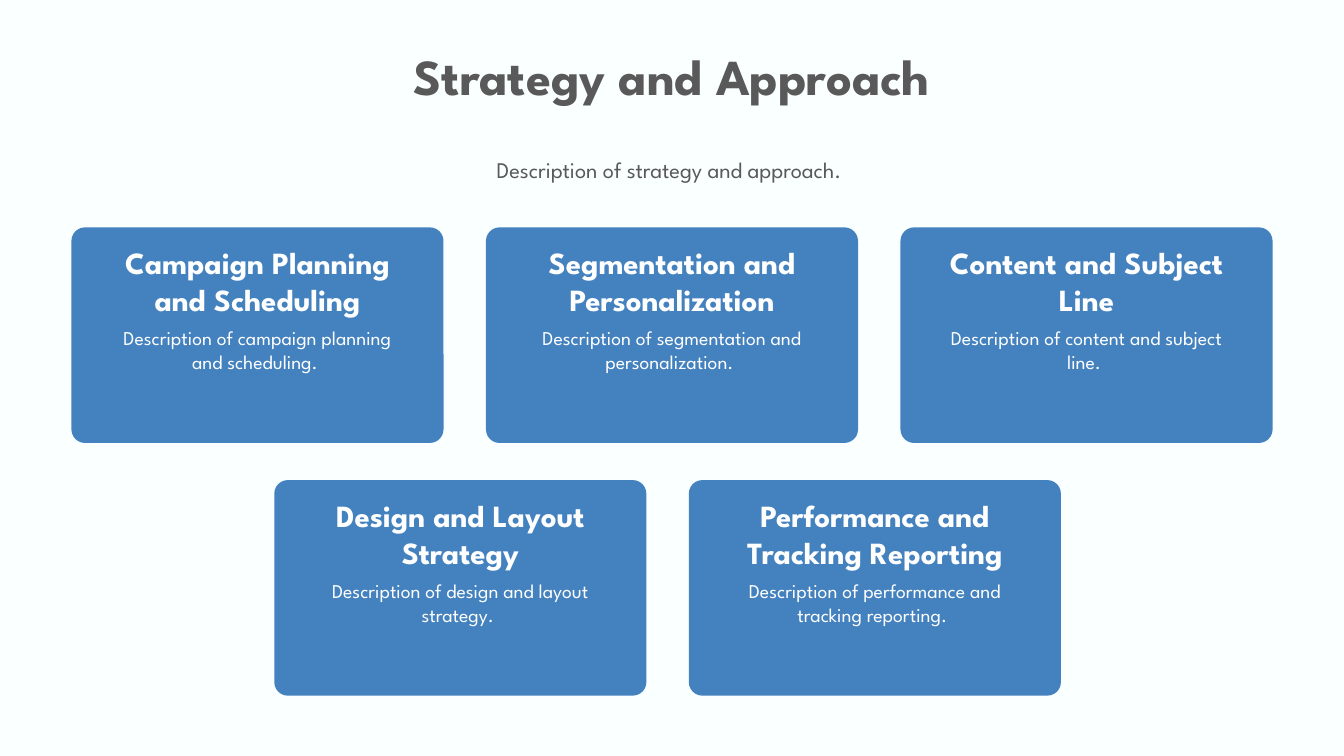
from pptx import Presentation
from pptx.dml.color import RGBColor
from pptx.enum.shapes import MSO_SHAPE
from pptx.enum.text import MSO_ANCHOR, MSO_AUTO_SIZE, PP_ALIGN
from pptx.util import Pt

ROUNDED = MSO_SHAPE.ROUNDED_RECTANGLE
TOP = MSO_ANCHOR.TOP
GROW = MSO_AUTO_SIZE.SHAPE_TO_FIT_TEXT
CENTER = PP_ALIGN.CENTER

FONT = "League Spartan"
GREY, WHITE, BLUE, PALE = "595959", "FFFFFF", "4482BF", "FAFFFF"
TITLE_ONLY = 5


def color(hex_value):
    return RGBColor.from_string(hex_value)


def write(frame, lines, hex_value, space_before=0):
    """Fill a text frame with centred (text, size, bold) lines."""
    frame_format = {
        "word_wrap": True, "auto_size": GROW, "vertical_anchor": TOP,
        "margin_left": Pt(7.2), "margin_right": Pt(7.2),
        "margin_top": Pt(3.6), "margin_bottom": Pt(3.6),
    }
    for key, value in frame_format.items():
        setattr(frame, key, value)
    for index, (text, size, bold) in enumerate(lines):
        paragraph = frame.add_paragraph() if index else frame.paragraphs[0]
        paragraph.alignment = CENTER
        paragraph.space_before = Pt(space_before)
        run = paragraph.add_run()
        run.text = text
        for key, value in {"name": FONT, "size": Pt(size), "bold": bold}.items():
            setattr(run.font, key, value)
        run.font.color.rgb = color(hex_value)


prs = Presentation()
prs.slide_width, prs.slide_height = Pt(960), Pt(540)
slide = prs.slides.add_slide(prs.slide_layouts[TITLE_ONLY])
slide.background.fill.solid()
slide.background.fill.fore_color.rgb = color(PALE)

# Title and introduction
margin, content_width = 51, 858
title = slide.shapes.title
title.left, title.top = Pt(margin), Pt(28.8)
title.width, title.height = Pt(content_width), Pt(51)
write(title.text_frame, [("Strategy and Approach", 36, True)], GREY)

intro = slide.shapes.add_textbox(Pt(margin), Pt(108), Pt(content_width), Pt(26.6))
write(intro.text_frame, [("Description of strategy and approach. ", 16, False)], GREY)

# Strategy cards: three above, two below
card_width, card_height, column_step = 265.8, 154, 296.1
inset_x, inset_y, text_height = 18.4, 8.3, 106.6
card_rows = [
    (margin, 162.4, [
        ("Campaign Planning and Scheduling", "Description of campaign planning and scheduling. "),
        ("Segmentation and Personalization", "Description of segmentation and personalization. "),
        ("Content and Subject Line", "Description of content and subject line. "),
    ]),
    (195.9, 342.9, [
        ("Design and Layout Strategy", "Description of design and layout strategy. "),
        ("Performance and Tracking Reporting", "Description of performance and tracking reporting. "),
    ]),
]
for row_left, top, topics in card_rows:
    for column, (heading, description) in enumerate(topics):
        left = row_left + column * column_step
        card = slide.shapes.add_shape(ROUNDED, Pt(left), Pt(top), Pt(card_width), Pt(card_height))
        card.adjustments[0] = 0.063
        card.shadow.inherit = False
        card.fill.solid()
        card.fill.fore_color.rgb = color(BLUE)
        card.line.fill.background()

        topic = slide.shapes.add_textbox(
            Pt(left + inset_x), Pt(top + inset_y), Pt(card_width - 2 * inset_x), Pt(text_height))
        write(topic.text_frame, [(heading, 22, True), (description, 14, False)], WHITE, space_before=6)

prs.save("out.pptx")
